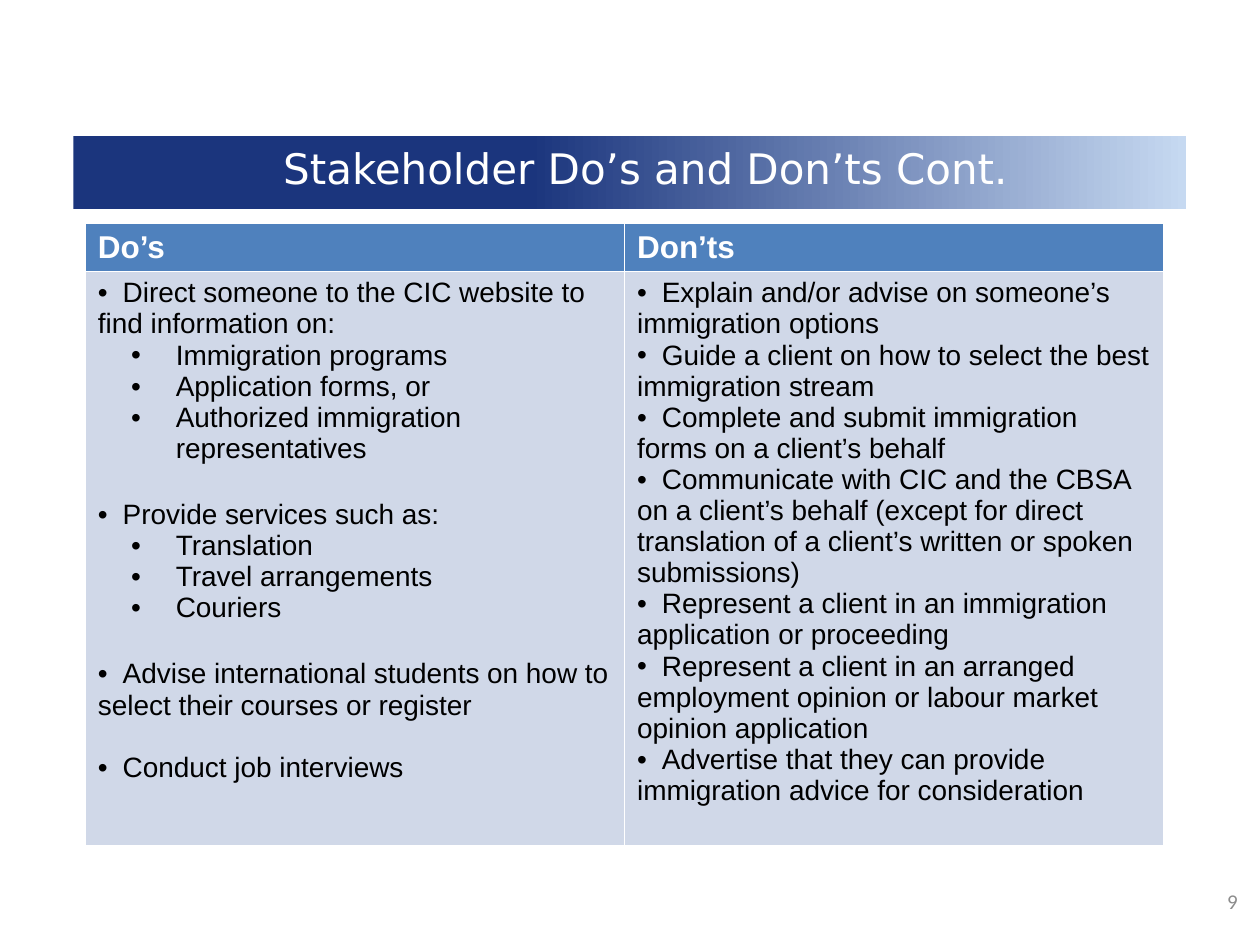
from lxml import etree
from pptx import Presentation, util as u
from pptx.dml.color import RGBColor
from pptx.enum import shapes, text
from pptx.oxml.ns import qn

TITLE = "Stakeholder Do’s and Don’ts Cont."
PAGE_NUMBER = "9"
# Each item: text, level, space before in points
COLUMNS = {
    "Do’s": [
        ("Direct someone to the CIC website to find information on:", 0, 0),
        ("Immigration programs", 1, 0),
        ("Application forms, or", 1, 0),
        ("Authorized immigration representatives", 1, 0),
        ("Provide services such as:", 0, 20),
        ("Translation", 1, 0),
        ("Travel arrangements", 1, 0),
        ("Couriers", 1, 0),
        ("Advise international students on how to select their courses or register", 0, 20),
        ("Conduct job interviews", 0, 18),
    ],
    "Don’ts": [
        ("Explain and/or advise on someone’s immigration options", 0, 0),
        ("Guide a client on how to select the best immigration stream", 0, 0),
        ("Complete and submit immigration forms on a client’s behalf", 0, 0),
        ("Communicate with CIC and the CBSA on a client’s behalf (except for direct "
         "translation of a client’s written or spoken submissions)", 0, 0),
        ("Represent a client in an immigration application or proceeding", 0, 0),
        ("Represent a client in an arranged employment opinion or labour market "
         "opinion application", 0, 0),
        ("Advertise that they can provide immigration advice for consideration", 0, 0),
    ],
}
COLORS = {"navy": "1B357D", "sky": "C6D9F1", "header": "4F81BD", "body": "D0D8E8",
          "white": "FFFFFF", "black": "000000", "gray": "8C8C8C"}
COLUMN_WIDTH, HEADER_HEIGHT, BODY_HEIGHT = 10.87, 0.97, 11.58
TAB_STOP = 0.5                           # main items: text start after the bullet
SUB_MARGIN, SUB_INDENT = 1.57, -0.9      # sub-items: text start and hanging bullet


def color(name):
    return RGBColor.from_string(COLORS[name])


def place(shape, left, top, width, height):
    shape.left, shape.top = u.Cm(left), u.Cm(top)
    shape.width, shape.height = u.Cm(width), u.Cm(height)


def style(para, face, size, ink, bold=False):
    for span in para.runs:
        span.font.name, span.font.size, span.font.bold = face, u.Pt(size), bold
        span.font.color.rgb = color(ink)


def add_bullet(para, level):
    """Main items wrap back under their bullet; sub-items hang."""
    props = para._p.get_or_add_pPr()
    margin, indent = (SUB_MARGIN, SUB_INDENT) if level else (0, 0)
    props.set("marL", str(u.Cm(margin)))
    props.set("indent", str(u.Cm(indent)))
    etree.SubElement(props, qn("a:buFont"), typeface="Arial")
    etree.SubElement(props, qn("a:buChar"), char="•")
    if not level:
        tabs = etree.SubElement(props, qn("a:tabLst"))
        etree.SubElement(tabs, qn("a:tab"), pos=str(u.Cm(TAB_STOP)), algn="l")


def fill_list(cell, items):
    frame = cell.text_frame
    for index, (words, level, gap) in enumerate(items):
        para = frame.add_paragraph() if index else frame.paragraphs[0]
        para.text = words if level else "\t" + words
        para.level = level
        add_bullet(para, level)
        if gap:
            para.space_before = u.Pt(gap)
        style(para, "Arial", 16, "black")


def paint(cell, name):
    cell.fill.solid()
    cell.fill.fore_color.rgb = color(name)


def add_title(page):
    title = page.shapes.title
    place(title, 1.9, 2.54, 22.23, 1.7)
    title.text_frame.text = TITLE
    title.text_frame.vertical_anchor = text.MSO_ANCHOR.MIDDLE
    para = title.text_frame.paragraphs[0]
    para.alignment = text.PP_ALIGN.CENTER
    style(para, "DejaVu Sans", 24, "white")

    banner = page.shapes.add_shape(shapes.MSO_SHAPE.RECTANGLE, u.Cm(1.48), u.Cm(2.74),
                                   u.Cm(22.43), u.Cm(1.48))
    banner.shadow.inherit = False
    banner.line.fill.background()
    banner.fill.gradient()
    banner.fill.gradient_angle = 0
    stops = [(0.41, "navy"), (1, "sky")]
    for stop, (position, name) in zip(banner.fill.gradient_stops, stops):
        stop.position, stop.color.rgb = position, color(name)
    title.element.addprevious(banner.element)


def add_comparison(page):
    table = page.shapes.add_table(2, len(COLUMNS), u.Cm(1.72), u.Cm(4.5),
                                  u.Cm(COLUMN_WIDTH * len(COLUMNS)),
                                  u.Cm(HEADER_HEIGHT + BODY_HEIGHT)).table
    table.rows[0].height, table.rows[1].height = u.Cm(HEADER_HEIGHT), u.Cm(BODY_HEIGHT)
    for index, (heading, items) in enumerate(COLUMNS.items()):
        header, body = table.cell(0, index), table.cell(1, index)
        header.text_frame.text = heading
        style(header.text_frame.paragraphs[0], "Arial", 18, "white", bold=True)
        paint(header, "header")
        fill_list(body, items)
        paint(body, "body")


def add_page_number(page):
    box = page.shapes.add_textbox(u.Cm(22.86), u.Cm(17.65), u.Cm(2.34), u.Cm(1.02))
    frame = box.text_frame
    frame.word_wrap = True
    frame.vertical_anchor = text.MSO_ANCHOR.MIDDLE
    frame.text = PAGE_NUMBER
    frame.paragraphs[0].alignment = text.PP_ALIGN.RIGHT
    style(frame.paragraphs[0], "Calibri", 12, "gray")


def main():
    deck = Presentation()
    deck.slide_width, deck.slide_height = u.Cm(25.4), u.Cm(19.05)
    page = deck.slides.add_slide(deck.slide_layouts[5])
    add_title(page)
    add_comparison(page)
    add_page_number(page)
    deck.save("out.pptx")


if __name__ == "__main__":
    main()
